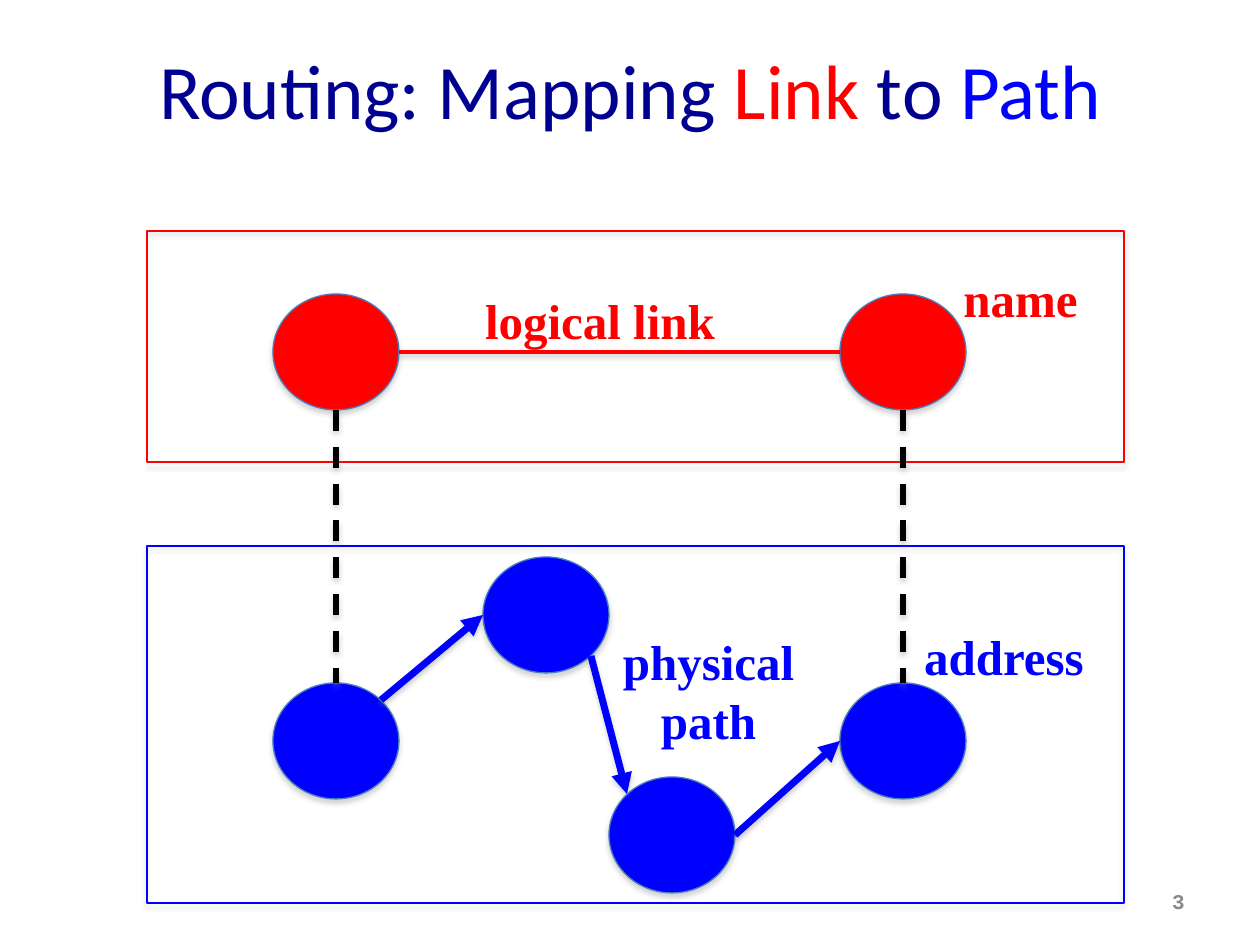
from dataclasses import dataclass
from math import sqrt

from lxml.etree import SubElement
from pptx import Presentation
from pptx.dml.color import RGBColor
from pptx.enum.dml import MSO_LINE
from pptx.enum.shapes import MSO_CONNECTOR, MSO_SHAPE
from pptx.enum.text import MSO_ANCHOR as ANCHOR, PP_ALIGN as ALIGN
from pptx.oxml.ns import qn
from pptx.util import Emu, Pt

PX_PER_INCH = 126
SLIDE_W, SLIDE_H = 1260, 945
NODE_W, NODE_H = 126, 116

RED = RGBColor(0xFF, 0x00, 0x00)
BLUE = RGBColor(0x00, 0x00, 0xFF)
NAVY = RGBColor(0x00, 0x00, 0x90)
BLACK = RGBColor(0x00, 0x00, 0x00)
GRAY = RGBColor(0x89, 0x89, 0x89)
NODE_EDGE = RGBColor(0x4A, 0x7E, 0xBB)


def px(n: float) -> Emu:
    return Emu(round(n * 914400 / PX_PER_INCH))


@dataclass(frozen=True)
class Node:
    x: int
    y: int
    color: RGBColor

    def site(self, dx: int, dy: int) -> tuple[int, int]:
        """Point on the rim in direction (dx, dy), each -1, 0 or 1."""
        k = 1 / sqrt(dx * dx + dy * dy)
        return (round(self.x + NODE_W / 2 * (1 + k * dx)),
                round(self.y + NODE_H / 2 * (1 + k * dy)))


@dataclass(frozen=True)
class Panel:
    y: int
    h: int
    color: RGBColor


@dataclass(frozen=True)
class Link:
    start: tuple[int, int]
    end: tuple[int, int]
    color: RGBColor
    width: int
    arrow: bool = False
    dashed: bool = False


@dataclass(frozen=True)
class Label:
    lines: tuple[str, ...]
    box: tuple[int, int, int, int]
    color: RGBColor


def add_shadow(sp, alpha: int) -> None:
    spPr = sp._element.spPr
    effects = SubElement(spPr, qn("a:effectLst"))
    shadow = SubElement(effects, qn("a:outerShdw"), blurRad=str(Pt(3.1)),
                        dist=str(Pt(1.8)), dir="5400000", rotWithShape="0")
    clr = SubElement(shadow, qn("a:srgbClr"), val="808080")
    SubElement(clr, qn("a:alpha"), val=str(alpha * 1000))


def add_outlined(slide, kind, box, line: RGBColor, fill: RGBColor | None = None) -> None:
    sp = slide.shapes.add_shape(kind, *map(px, box))
    if fill is None:
        sp.fill.background()
    else:
        sp.fill.solid()
        sp.fill.fore_color.rgb = fill
    sp.line.color.rgb = line
    sp.line.width = Pt(0.75)
    add_shadow(sp, 35)


def add_link(slide, link: Link) -> None:
    ends = map(px, link.start + link.end)
    sp = slide.shapes.add_connector(MSO_CONNECTOR.STRAIGHT, *ends)
    sp.line.color.rgb = link.color
    sp.line.width = Pt(link.width)
    if link.dashed:
        sp.line.dash_style = MSO_LINE.DASH
    if link.arrow:
        SubElement(sp._element.spPr.find(qn("a:ln")), qn("a:tailEnd"), type="triangle")
    add_shadow(sp, 38)


def add_text(slide, lines, box, *, font: str, size: int, bold=False,
             align=ALIGN.CENTER, anchor=ANCHOR.TOP, wrap=True) -> None:
    """Each line is a sequence of (text, colour) runs."""
    tf = slide.shapes.add_textbox(*map(px, box)).text_frame
    tf.word_wrap = wrap
    tf.vertical_anchor = anchor
    for i, runs in enumerate(lines):
        p = tf.add_paragraph() if i else tf.paragraphs[0]
        p.alignment = align
        for text, color in runs:
            r = p.add_run()
            r.text = text
            r.font.name = font
            r.font.size = Pt(size)
            r.font.bold = bold
            r.font.color.rgb = color


# Logical nodes sit above their physical counterparts
name_a, name_b = Node(273, 294, RED), Node(840, 294, RED)
addr_a, addr_b = Node(273, 683, BLUE), Node(840, 683, BLUE)
hop_1, hop_2 = Node(483, 557, BLUE), Node(609, 777, BLUE)
NODES = (addr_a, name_b, name_a, hop_1, addr_b, hop_2)

PANELS = (Panel(231, 231, RED), Panel(546, 357, BLUE))

PATH_LINKS = (
    Link(addr_a.site(1, -1), hop_1.site(-1, 0), BLUE, 4, arrow=True),
    Link(hop_1.site(1, 1), hop_2.site(-1, -1), BLUE, 4, arrow=True),
    Link(hop_2.site(1, 0), addr_b.site(-1, 0), BLUE, 4, arrow=True),
)
LOGICAL_LINK = Link(name_a.site(1, 0), name_b.site(-1, 0), RED, 2)
MAPPINGS = tuple(
    Link(name.site(0, 1), addr.site(0, -1), BLACK, 3, dashed=True)
    for name, addr in ((name_a, addr_a), (name_b, addr_b))
)

LABELS = (
    Label(("name",), (950, 262, 141, 72), RED),
    Label(("address",), (911, 620, 186, 72), BLUE),
    Label(("logical link",), (471, 284, 258, 72), RED),
    Label(("physical", "path"), (609, 625, 199, 131), BLUE),
)


def main() -> None:
    prs = Presentation()
    prs.slide_width, prs.slide_height = px(SLIDE_W), px(SLIDE_H)
    s = prs.slides.add_slide(prs.slide_layouts[6])

    # Title and page number
    title = [("Routing: Mapping ", NAVY), ("Link ", RED), ("to ", NAVY), ("Path", BLUE)]
    add_text(s, [title], (63, 10, 1134, 158), font="Calibri", size=44,
             anchor=ANCHOR.MIDDLE)
    add_text(s, [[("3", GRAY)]], (903, 876, 294, 50), font="Courier New", size=12,
             bold=True, align=ALIGN.RIGHT, anchor=ANCHOR.MIDDLE)

    # Nodes, path arrows, panels, then the links over them
    for node in NODES:
        add_outlined(s, MSO_SHAPE.OVAL, (node.x, node.y, NODE_W, NODE_H),
                     NODE_EDGE, node.color)
    for link in PATH_LINKS:
        add_link(s, link)
    for panel in PANELS:
        add_outlined(s, MSO_SHAPE.RECTANGLE, (147, panel.y, 977, panel.h), panel.color)
    for link in (LOGICAL_LINK, *MAPPINGS):
        add_link(s, link)

    # Labels
    for label in LABELS:
        add_text(s, [[(line, label.color)] for line in label.lines], label.box,
                 font="Times New Roman", size=28, bold=True, wrap=False)

    prs.save("out.pptx")


if __name__ == "__main__":
    main()
